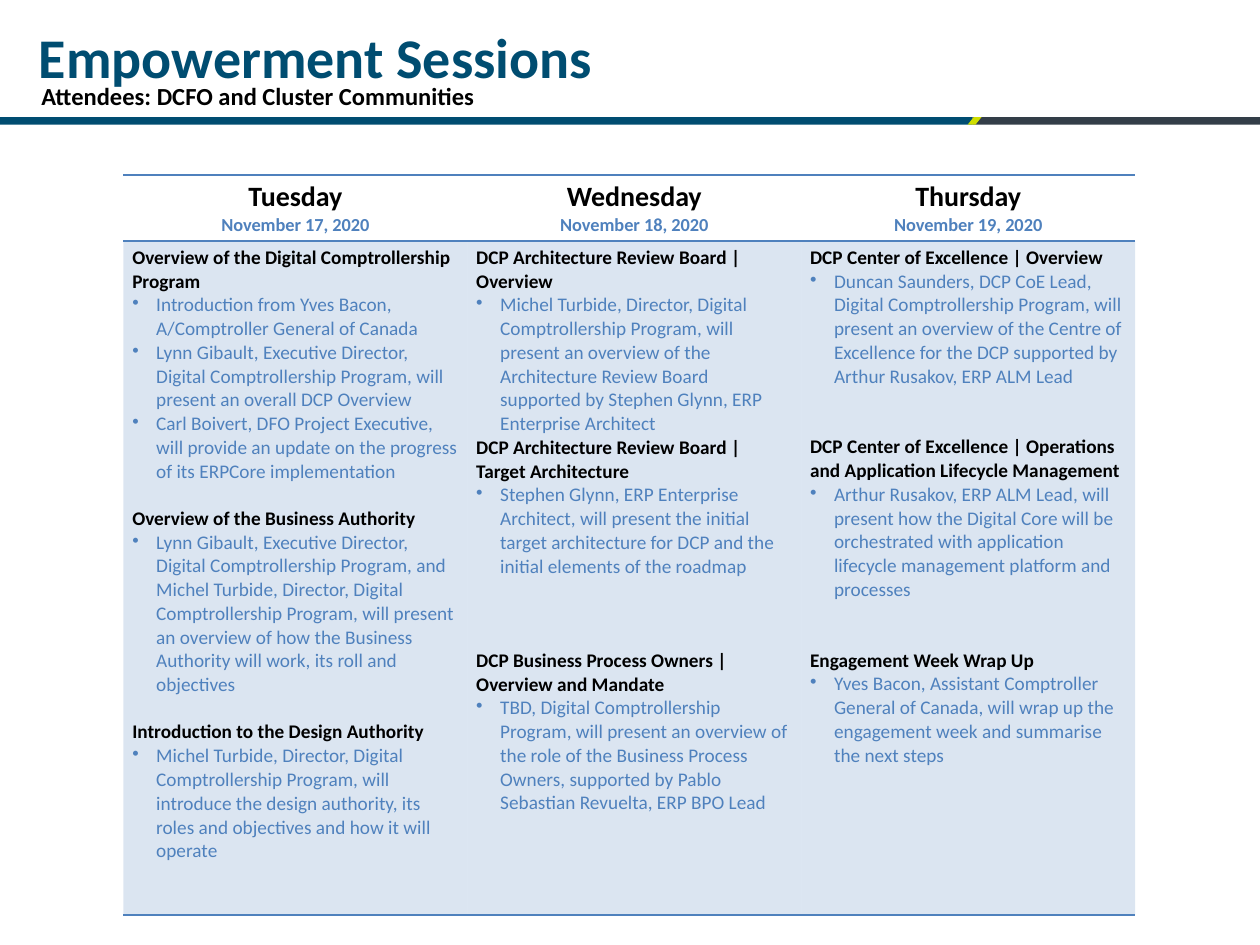
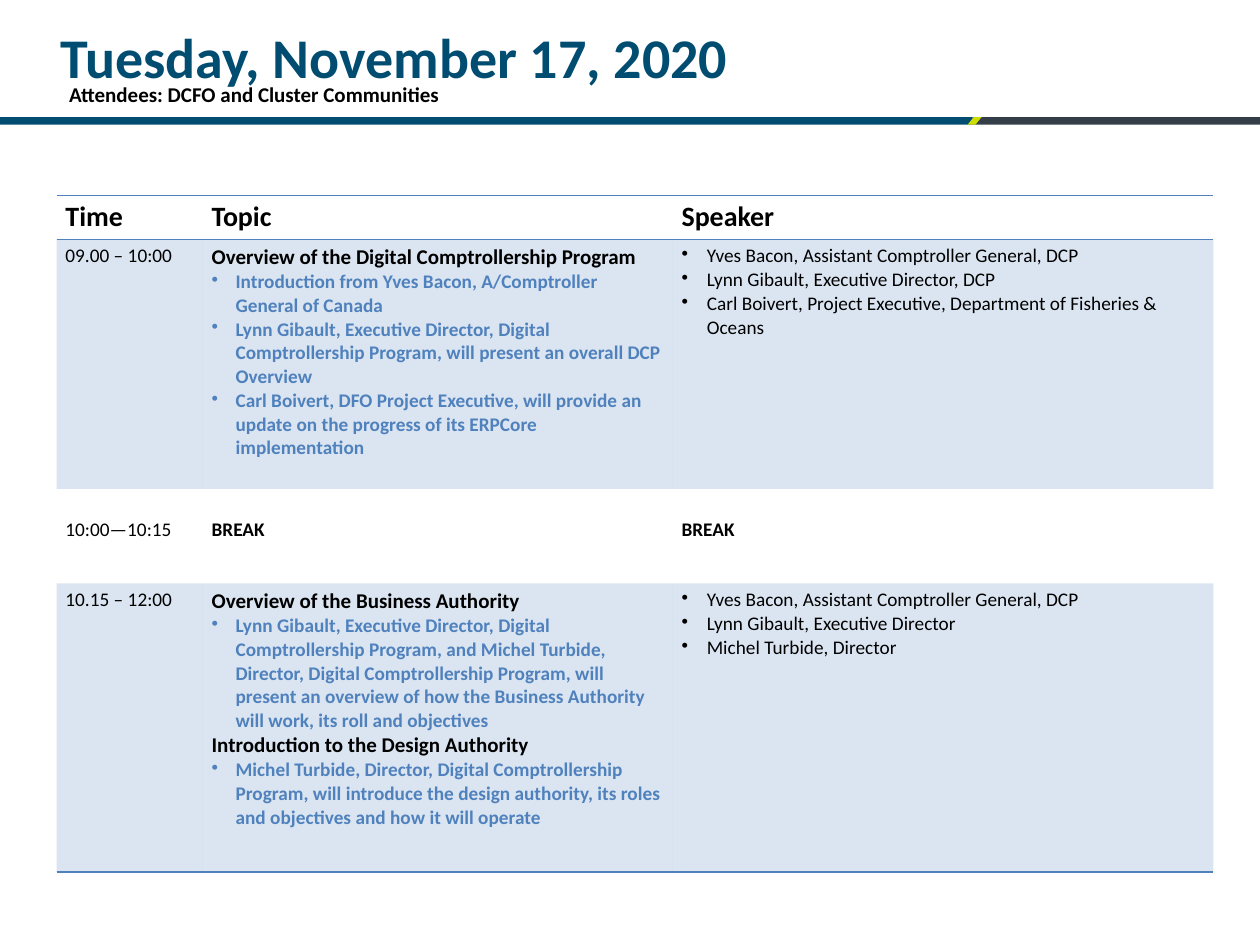
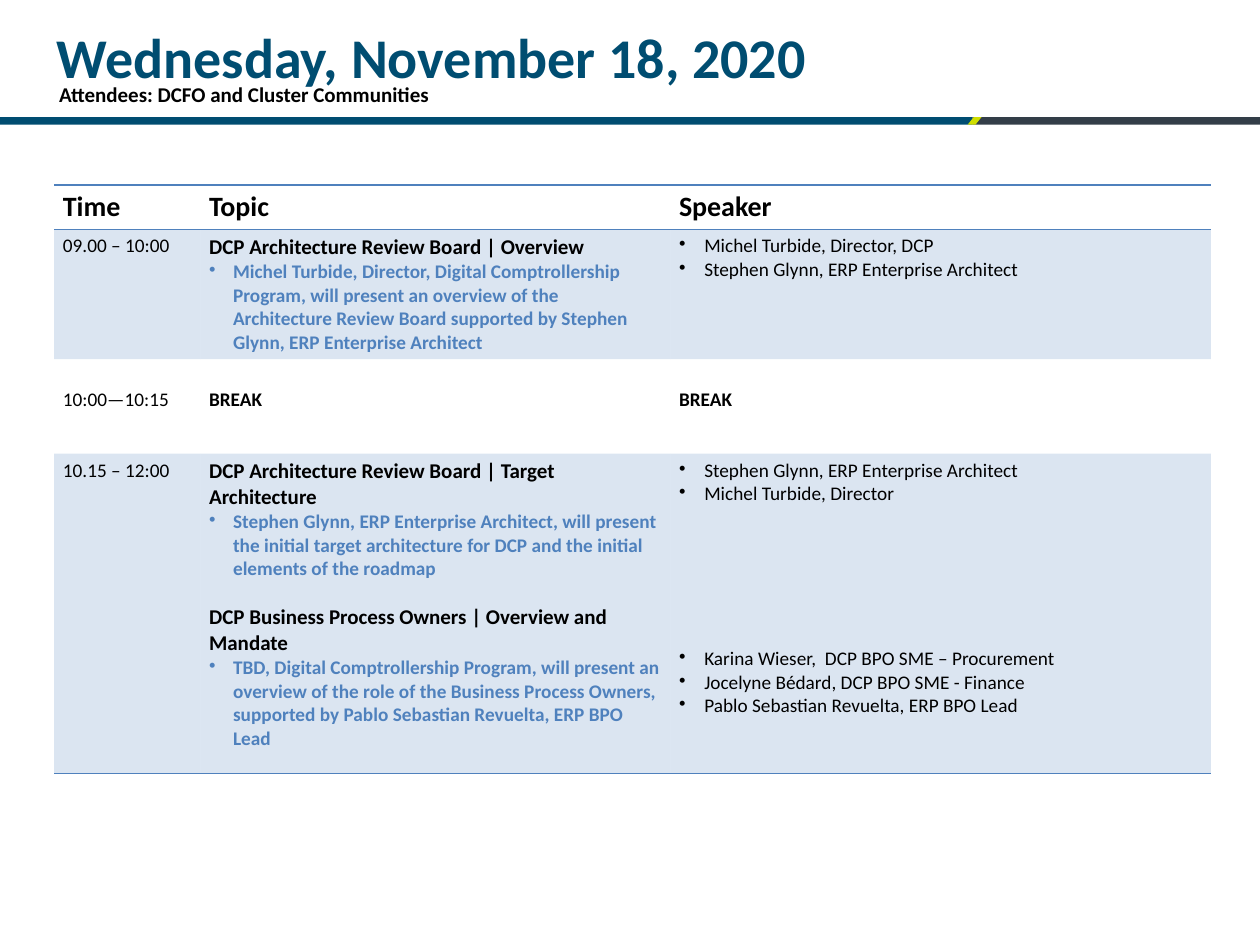
import dataclasses

import lxml.etree
import pptx
import pptx.dml.color
import pptx.enum.shapes
import pptx.enum.text
import pptx.oxml.ns
import pptx.util

Inches = pptx.util.Inches
Pt = pptx.util.Pt
ALIGN = pptx.enum.text.PP_ALIGN
SHAPE = pptx.enum.shapes.MSO_SHAPE
qn = pptx.oxml.ns.qn

COLORS = {
    "navy": "004D71",
    "slate": "333E48",
    "lime": "CFDE00",
    "blue": "4F81BD",
    "black": "000000",
}
FONT = "Calibri"
NO_STYLE = "{2D5ABB26-0587-4C30-8999-92F81FD0307C}"
BLANK_LINE = 13.4
ATTENDEES = "Attendees: DCFO and Cluster Communities"

DCP = "Overview of the Digital Comptrollership Program"
BUSINESS = "Overview of the Business Authority"
DESIGN = "Introduction to the Design Authority"
REVIEW = "DCP Architecture Review Board | Overview"
TARGET = "DCP Architecture Review Board | Target Architecture"
OWNERS = "DCP Business Process Owners | Overview and Mandate"
CENTER = "DCP Center of Excellence | Overview"
OPERATIONS = "DCP Center of Excellence | Operations and Application Lifecycle Management"
WRAP_UP = "Engagement Week Wrap Up"

SESSIONS = {
    DCP: [
        "Introduction from Yves Bacon, A/Comptroller General of Canada",
        "Lynn Gibault, Executive Director, Digital Comptrollership Program, "
        "will present an overall DCP Overview",
        "Carl Boivert, DFO Project Executive, will provide an update on the "
        "progress of its ERPCore implementation",
    ],
    BUSINESS: [
        "Lynn Gibault, Executive Director, Digital Comptrollership Program, and "
        "Michel Turbide, Director, Digital Comptrollership Program, will present an "
        "overview of how the Business Authority will work, its roll and objectives",
    ],
    DESIGN: [
        "Michel Turbide, Director, Digital Comptrollership Program, will introduce "
        "the design authority, its roles and objectives and how it will operate",
    ],
    REVIEW: [
        "Michel Turbide, Director, Digital Comptrollership Program, will present an "
        "overview of the Architecture Review Board supported by Stephen Glynn, "
        "ERP Enterprise Architect",
    ],
    TARGET: [
        "Stephen Glynn, ERP Enterprise Architect, will present the initial target "
        "architecture for DCP and the initial elements of the roadmap",
    ],
    OWNERS: [
        "TBD, Digital Comptrollership Program, will present an overview of the role "
        "of the Business Process Owners, supported by Pablo Sebastian Revuelta, "
        "ERP BPO Lead",
    ],
    CENTER: [
        "Duncan Saunders, DCP CoE Lead, Digital Comptrollership Program, will present "
        "an overview of the Centre of Excellence for the DCP supported by "
        "Arthur Rusakov, ERP ALM Lead",
    ],
    OPERATIONS: [
        "Arthur Rusakov, ERP ALM Lead, will present how the Digital Core will be "
        "orchestrated with application lifecycle management platform and processes",
    ],
    WRAP_UP: [
        "Yves Bacon, Assistant Comptroller General of Canada, will wrap up the "
        "engagement week and summarise the next steps",
    ],
}


@dataclasses.dataclass
class Line:
    text: str
    size: float = 11
    bold: bool = False
    color: str = "black"
    indent: float = 0
    blank_lines: int = 0
    align: ALIGN = ALIGN.LEFT


def rgb(name):
    return pptx.dml.color.RGBColor.from_string(COLORS[name])


def write_lines(frame, lines):
    frame.word_wrap = True
    for index, line in enumerate(lines):
        paragraph = frame.add_paragraph() if index else frame.paragraphs[0]
        if line.indent:
            properties = paragraph._p.get_or_add_pPr()
            properties.set("marL", str(Inches(line.indent)))
            properties.set("indent", str(-Inches(line.indent)))
            lxml.etree.SubElement(properties, qn("a:buChar")).set("char", "•")
        paragraph.alignment = line.align
        if line.blank_lines:
            paragraph.space_before = Pt(line.blank_lines * BLANK_LINE)
        run = paragraph.add_run()
        run.text = line.text
        run.font.name = FONT
        run.font.size = Pt(line.size)
        run.font.bold = line.bold
        run.font.color.rgb = rgb(line.color)


def add_text(slide, box, line):
    frame = slide.shapes.add_textbox(*map(Inches, box)).text_frame
    write_lines(frame, [line])
    return frame


def add_band(slide, top=0.93, height=0.06):
    segments = [
        (SHAPE.RECTANGLE, 0, 7.72, "navy"),
        (SHAPE.RECTANGLE, 7.72, 2.28, "slate"),
        (SHAPE.PARALLELOGRAM, 7.68, 0.11, "lime"),
    ]
    for preset, left, width, color in segments:
        segment = slide.shapes.add_shape(preset, *map(Inches, (left, top, width, height)))
        segment.shadow.inherit = False
        segment.fill.solid()
        segment.fill.fore_color.rgb = rgb(color)
        segment.line.fill.background()
        if preset == SHAPE.PARALLELOGRAM:
            segment.adjustments[0] = 0.8


def add_heading(slide, title, title_box, attendees_box, attendees_size):
    add_band(slide)
    frame = add_text(slide, title_box, Line(title, 32, True, "navy"))
    frame.vertical_anchor = pptx.enum.text.MSO_ANCHOR.BOTTOM
    frame.margin_bottom = Inches(0.03)
    add_text(slide, attendees_box, Line(ATTENDEES, attendees_size, True))


def style_cell(cell, shaded, edges):
    cell.margin_left = cell.margin_right = Inches(0.07)
    cell.margin_top = cell.margin_bottom = Inches(0.04)
    properties = cell._tc.get_or_add_tcPr()
    if shaded:
        cell.fill.solid()
        cell.fill.fore_color.rgb = rgb("blue")
        tint = next(properties.iter(qn("a:srgbClr")))
        lxml.etree.SubElement(tint, qn("a:alpha")).set("val", "20000")
    else:
        cell.fill.background()
    for position, edge in enumerate(edges):
        border = lxml.etree.Element(qn(f"a:ln{edge}"), w=str(Pt(1)))
        fill = lxml.etree.SubElement(border, qn("a:solidFill"))
        lxml.etree.SubElement(fill, qn("a:srgbClr")).set("val", COLORS["blue"])
        properties.insert(position, border)


def add_schedule(slide, left, top, widths, heights, rows, shaded_rows):
    size = (left, top, sum(widths), sum(heights))
    schedule = slide.shapes.add_table(len(rows), len(widths), *map(Inches, size)).table
    schedule.horz_banding = False
    next(schedule._tbl.iter(qn("a:tableStyleId"))).text = NO_STYLE
    for column, width in zip(schedule.columns, widths):
        column.width = Inches(width)
    for row, height in zip(schedule.rows, heights):
        row.height = Inches(height)
    for r, row in enumerate(rows):
        edges = "TB" if r == 0 else "B" if r == len(rows) - 1 else ""
        for c, lines in enumerate(row):
            cell = schedule.cell(r, c)
            style_cell(cell, r in shaded_rows, edges)
            write_lines(cell.text_frame, lines)
    return schedule


def session_lines(blank_lines_before, heading_size, bold_points):
    lines = []
    for heading, blank_lines in blank_lines_before.items():
        lines.append(Line(heading, heading_size, True, blank_lines=blank_lines))
        lines += [Line(point, 11, bold_points, "blue", 0.19) for point in SESSIONS[heading]]
    return lines


def speaker_lines(names, blank_lines_before=None):
    gaps = blank_lines_before or {}
    return [Line(name, indent=0.2, blank_lines=gaps.get(name, 0)) for name in names]


def day_lines(day, date):
    return [
        Line(day, 16, True, align=ALIGN.CENTER),
        Line(date, 10.5, True, "blue", align=ALIGN.CENTER),
    ]


def add_week_slide(slide):
    add_heading(slide, "Empowerment Sessions", (0.21, 0.13, 9, 0.61), (0.23, 0.59, 3.71, 0.34), 14)
    days = [
        day_lines("Tuesday", "November 17, 2020"),
        day_lines("Wednesday", "November 18, 2020"),
        day_lines("Thursday", "November 19, 2020"),
    ]
    plans = [
        {DCP: 0, BUSINESS: 1, DESIGN: 1},
        {REVIEW: 0, TARGET: 0, OWNERS: 3},
        {CENTER: 0, OPERATIONS: 2, WRAP_UP: 2},
    ]
    sessions = [session_lines(plan, 11, False) for plan in plans]
    add_schedule(slide, 0.98, 1.39, (2.73, 2.65, 2.65), (0.52, 5.35), [days, sessions], {1})


def add_day_slide(slide, title, title_box, attendees_left, corner, heights, first, second):
    add_heading(slide, title, title_box, (attendees_left, 0.6, 5.75, 0.3), 12)
    rows = [
        [[Line(label, 16, True)] for label in ("Time", "Topic", "Speaker")],
        [[Line("09.00 – 10:00")], *first],
        [[Line("10:00—10:15")], [Line("BREAK", bold=True)], [Line("BREAK", bold=True)]],
        [[Line("10.15 – 12:00")], *second],
    ]
    schedule = add_schedule(slide, *corner, (1.16, 3.73, 4.29), heights, rows, {1, 3})
    for cell in schedule.rows[2].cells:
        cell.margin_top = Inches(0.23)


def main():
    deck = pptx.Presentation()
    deck.slide_width, deck.slide_height = Inches(10), Inches(7.5)
    week, tuesday, wednesday = (deck.slides.add_slide(deck.slide_layouts[6]) for _ in range(3))
    add_week_slide(week)
    add_day_slide(
        tuesday, "Tuesday, November 17, 2020", (0.38, 0.21, 9.17, 0.53), 0.45,
        (0.45, 1.55), (0.35, 1.98, 0.75, 2.29),
        (
            session_lines({DCP: 0}, 12, True),
            speaker_lines([
                "Yves Bacon, Assistant Comptroller General, DCP",
                "Lynn Gibault, Executive Director, DCP",
                "Carl Boivert, Project Executive, Department of Fisheries & Oceans",
            ]),
        ),
        (
            session_lines({BUSINESS: 0, DESIGN: 0}, 12, True),
            speaker_lines([
                "Yves Bacon, Assistant Comptroller General, DCP",
                "Lynn Gibault, Executive Director",
                "Michel Turbide, Director",
            ]),
        ),
    )
    procurement = "Karina Wieser,  DCP BPO SME – Procurement"
    add_day_slide(
        wednesday, "Wednesday, November 18, 2020", (0.35, 0.13, 9, 0.61), 0.37,
        (0.43, 1.47), (0.35, 1.03, 0.75, 2.54),
        (
            session_lines({REVIEW: 0}, 12, True),
            speaker_lines([
                "Michel Turbide, Director, DCP",
                "Stephen Glynn, ERP Enterprise Architect",
            ]),
        ),
        (
            session_lines({TARGET: 0, OWNERS: 1}, 12, True),
            speaker_lines([
                "Stephen Glynn, ERP Enterprise Architect",
                "Michel Turbide, Director",
                procurement,
                "Jocelyne Bédard, DCP BPO SME - Finance",
                "Pablo Sebastian Revuelta, ERP BPO Lead",
            ], {procurement: 6}),
        ),
    )
    deck.save("out.pptx")


if __name__ == "__main__":
    main()
